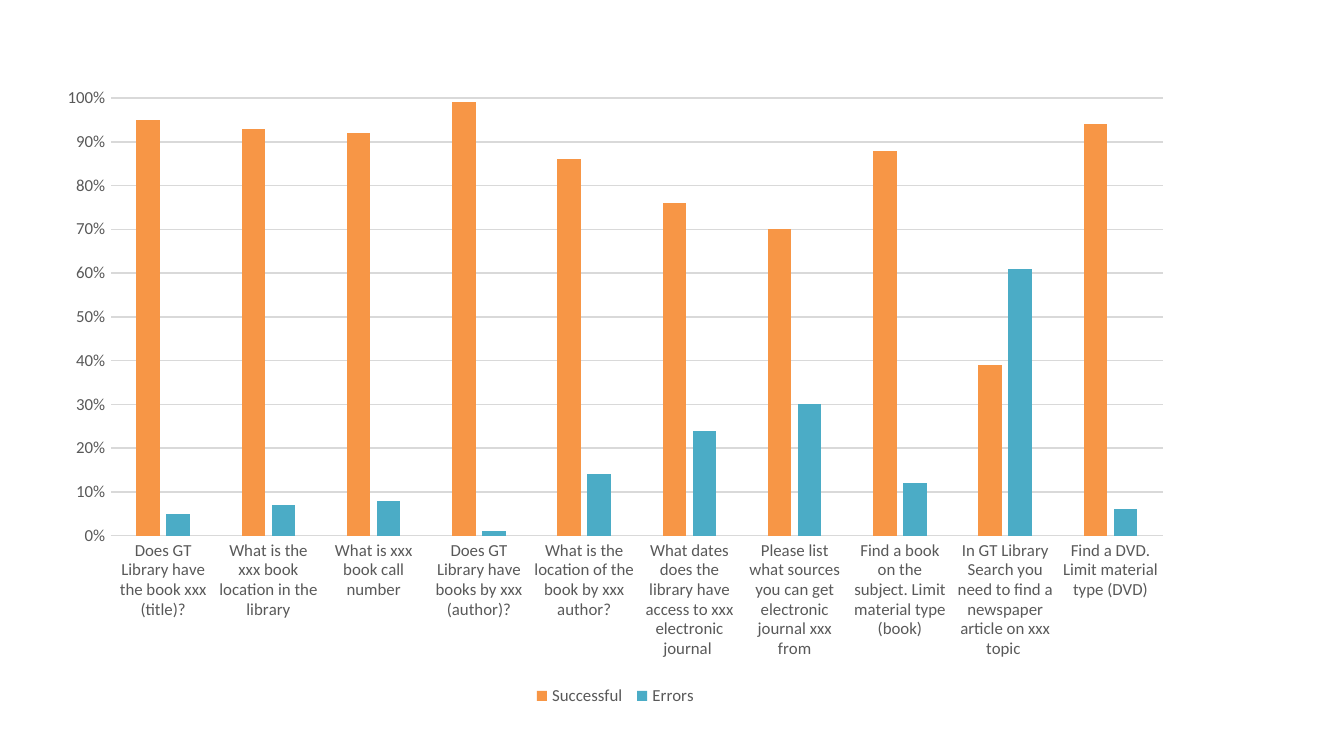
from dataclasses import dataclass

from pptx import Presentation
from pptx import util as u
from pptx.chart.data import CategoryChartData
from pptx.dml.color import RGBColor
from pptx.enum import chart as ch

PX = u.Inches(1) // 96


@dataclass(frozen=True)
class Theme:
    font: str = "Calibri"
    base_size: int = 10
    label_size: int = 9
    ink: str = "000000"
    label: str = "595959"
    rule: str = "D9D9D9"
    rule_width: float = 0.75
    successful: str = "F79646"
    errors: str = "4BACC6"


TASKS = [
    ("Does GT Library have the book xxx (title)?", 0.95, 0.05),
    ("What is the xxx book location in the library", 0.93, 0.07),
    ("What is xxx book call number", 0.92, 0.08),
    ("Does GT Library have books by xxx (author)?", 0.99, 0.01),
    ("What is the location of the book by xxx author?", 0.86, 0.14),
    ("What dates does the library have access to xxx electronic journal ", 0.76, 0.24),
    ("Please list what sources you can get electronic journal xxx from", 0.70, 0.30),
    ("Find a book on the subject. Limit material type (book)", 0.88, 0.12),
    ("In GT Library Search you need to find a newspaper article on xxx topic ", 0.39, 0.61),
    ("Find a DVD. Limit material type (DVD)", 0.94, 0.06),
]


def format_text(part, *, face, size, color):
    """Set the font of any chart part that carries text."""
    part.font.name = face
    part.font.size = u.Pt(size)
    part.font.color.rgb = RGBColor.from_string(color)


class SlideBuilder:
    def __init__(self, slide, theme):
        self.slide = slide
        self.theme = theme

    def rule(self, line):
        line.color.rgb = RGBColor.from_string(self.theme.rule)
        line.width = u.Pt(self.theme.rule_width)

    def label(self, part):
        theme = self.theme
        format_text(part, face=theme.font, size=theme.label_size, color=theme.label)

    def column_chart(self, left, top, width, height, categories, series):
        """Draw clustered percentage columns; series holds (name, values, color)."""
        theme = self.theme
        data = CategoryChartData(number_format="0%")
        data.categories = categories
        for name, values, _ in series:
            data.add_series(name, values)
        box = [n * PX for n in (left, top, width, height)]
        chart = self.slide.shapes.add_chart(
            ch.XL_CHART_TYPE.COLUMN_CLUSTERED, *box, data).chart
        format_text(chart, face=theme.font, size=theme.base_size, color=theme.ink)
        chart.has_title = False

        plot = chart.plots[0]
        plot.gap_width = 219
        plot.overlap = -27
        plot.vary_by_categories = False
        for columns, (_, _, color) in zip(plot.series, series):
            columns.format.fill.solid()
            columns.format.fill.fore_color.rgb = RGBColor.from_string(color)

        tasks, share = chart.category_axis, chart.value_axis
        for axis in (tasks, share):
            axis.major_tick_mark = axis.minor_tick_mark = ch.XL_TICK_MARK.NONE
            self.label(axis.tick_labels)
        self.rule(tasks.format.line)
        share.format.line.fill.background()
        share.maximum_scale = 1
        share.tick_labels.number_format = "0%"
        share.tick_labels.number_format_is_linked = False
        share.has_major_gridlines = True
        self.rule(share.major_gridlines.format.line)

        chart.has_legend = True
        chart.legend.position = ch.XL_LEGEND_POSITION.BOTTOM
        chart.legend.include_in_layout = False
        self.label(chart.legend)


def main():
    deck = Presentation()
    deck.slide_width, deck.slide_height = 960 * PX, 540 * PX
    theme = Theme()
    builder = SlideBuilder(deck.slides.add_slide(deck.slide_layouts[6]), theme)
    questions, successful, errors = zip(*TASKS)
    builder.column_chart(32, 54, 815, 454, questions, [
        ("Successful ", successful, theme.successful),
        ("Errors", errors, theme.errors),
    ])
    deck.save("out.pptx")


if __name__ == "__main__":
    main()
